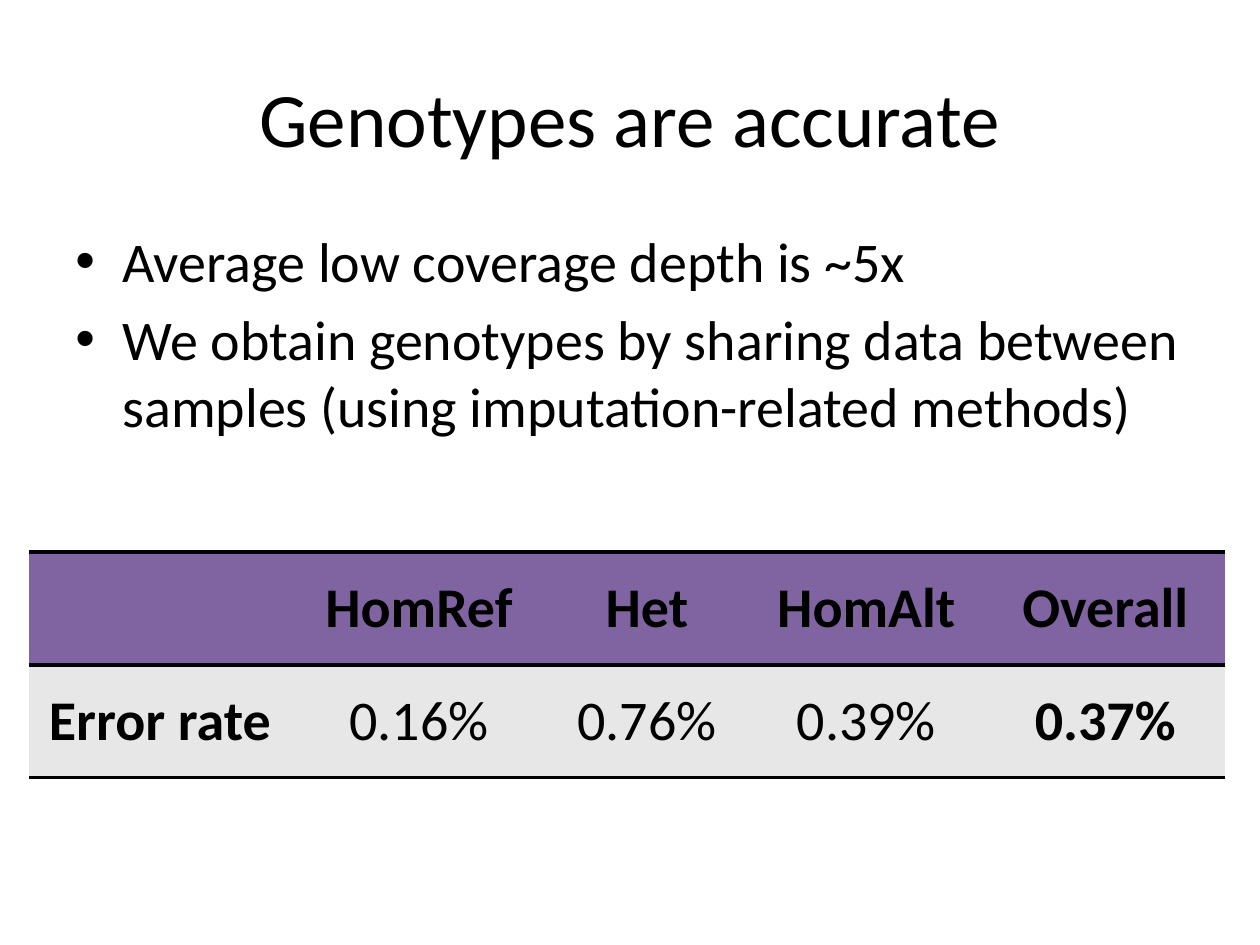
from lxml.etree import SubElement
from pptx import Presentation
from pptx.dml.color import RGBColor
from pptx.enum.text import MSO_ANCHOR as Anchor, PP_ALIGN as Align
from pptx.oxml import parse_xml
from pptx.oxml.ns import nsdecls, qn
from pptx.util import Emu, Pt

BLACK = RGBColor(0x00, 0x00, 0x00)
PURPLE = RGBColor(0x80, 0x64, 0xA2)
GREY = RGBColor(0xE7, 0xE7, 0xE7)
PX_PER_INCH = 126
EMU_PER_INCH = 914400
PLAIN_TABLE = "{2D5ABB26-0587-4C30-8999-92F81FD0307C}"


def px(length):
    return Emu(round(length * EMU_PER_INCH / PX_PER_INCH))


class SlideWriter:
    font = {"name": "Calibri", "size": Pt(32), "bold": False}
    rule_width = Pt(2)

    def __init__(self, slide):
        self.slide = slide

    def style(self, paragraph, **changes):
        for attribute, value in {**self.font, **changes}.items():
            setattr(paragraph.font, attribute, value)
        paragraph.font.color.rgb = BLACK

    def frame(self, left, top, width, height, anchor):
        box = self.slide.shapes.add_textbox(*map(px, (left, top, width, height)))
        frame = box.text_frame
        frame.word_wrap = True
        frame.vertical_anchor = anchor
        return frame

    def title(self, text, *place):
        heading = self.frame(*place, Anchor.MIDDLE).paragraphs[0]
        heading.text = text
        heading.alignment = Align.CENTER
        self.style(heading, size=Pt(44))

    def bullets(self, points, *place, indent):
        frame = self.frame(*place, Anchor.TOP)
        for index, text in enumerate(points):
            point = frame.add_paragraph() if index else frame.paragraphs[0]
            point.text = text
            point.space_before = Pt(6.4 if index else 0)
            properties = point._p.get_or_add_pPr()
            properties.set("marL", str(px(indent)))
            properties.set("indent", str(-px(indent)))
            SubElement(properties, qn("a:buFont"), typeface="Arial")
            SubElement(properties, qn("a:buChar"), char="•")
            self.style(point)

    def rules(self, cell):
        for index, side in enumerate(("lnT", "lnB")):
            cell._tc.get_or_add_tcPr().insert(index, parse_xml(
                f'<a:{side} {nsdecls("a")} w="{self.rule_width}"><a:solidFill>'
                f'<a:srgbClr val="{BLACK}"/></a:solidFill></a:{side}>'))

    def table(self, rows, left, top, widths, row_height, fills, bold_cells):
        size = px(sum(widths)), px(row_height * len(rows))
        table = self.slide.shapes.add_table(
            len(rows), len(widths), px(left), px(top), *size).table
        table.first_row = table.horz_banding = False
        table._tbl.tblPr.find(qn("a:tableStyleId")).text = PLAIN_TABLE
        for column, width in zip(table.columns, widths):
            column.width = px(width)
        for r, (values, fill) in enumerate(zip(rows, fills)):
            table.rows[r].height = px(row_height)
            for c, value in enumerate(values):
                cell = table.cell(r, c)
                cell.vertical_anchor = Anchor.MIDDLE
                cell.fill.solid()
                cell.fill.fore_color.rgb = fill
                self.rules(cell)
                entry = cell.text_frame.paragraphs[0]
                entry.text = value
                entry.alignment = Align.CENTER
                self.style(entry, bold=(r, c) in bold_cells)


def main():
    deck = Presentation()
    deck.slide_width, deck.slide_height = px(1260), px(945)
    writer = SlideWriter(deck.slides.add_slide(deck.slide_layouts[6]))
    writer.title("Genotypes are accurate", 63, 38, 1134, 158)
    writer.bullets(
        ["Average low coverage depth is ~5x",
         "We obtain genotypes by sharing data between samples "
         "(using imputation-related methods)"],
        63, 220, 1134, 624, indent=47)
    headings = ["", "HomRef", "Het", "HomAlt", "Overall"]
    rates = ["Error rate", "0.16%", "0.76%", "0.39%", "0.37%"]
    header_cells = {(0, c) for c in range(len(headings))}
    writer.table([headings, rates], 29, 552, [262, 256, 200, 239, 239], 113,
                 [PURPLE, GREY], header_cells | {(1, 0), (1, 4)})
    deck.save("out.pptx")


if __name__ == "__main__":
    main()
